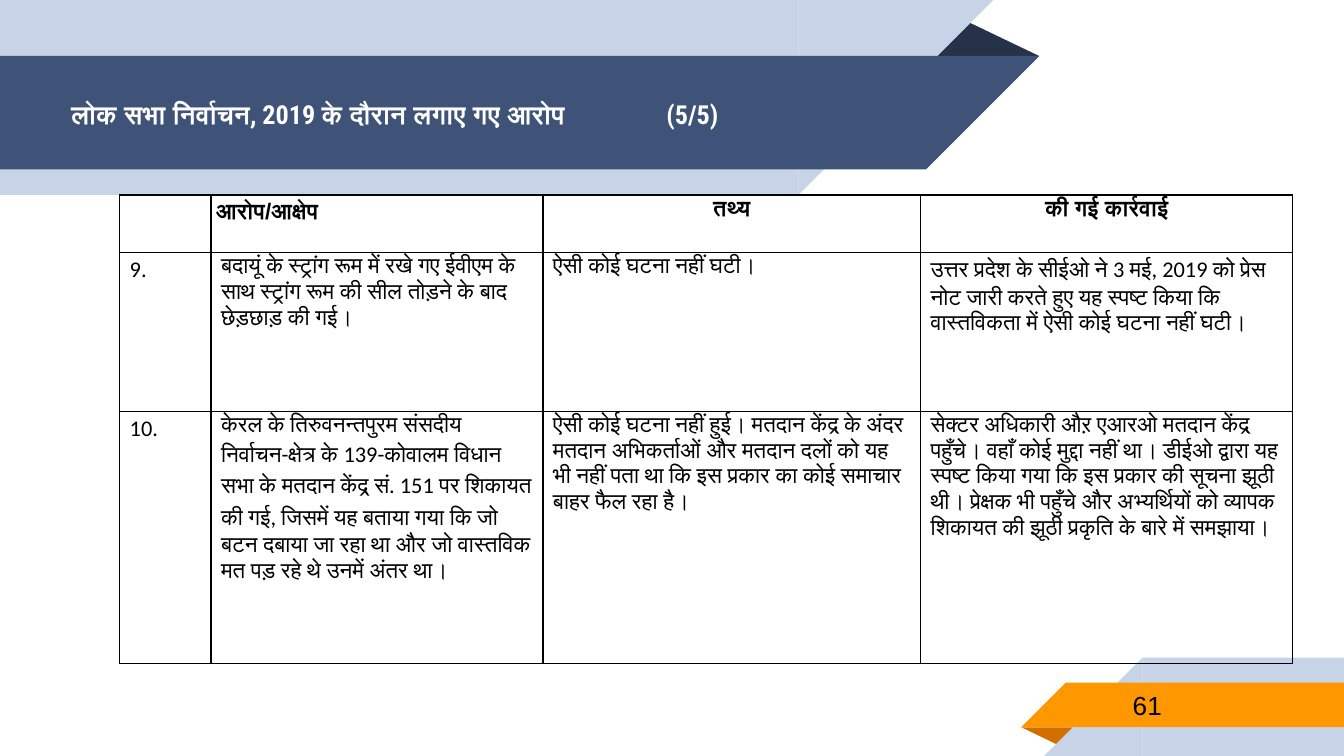
from lxml.etree import SubElement
from pptx import Presentation
from pptx.dml.color import RGBColor
from pptx.enum.shapes import MSO_SHAPE
from pptx.enum.text import MSO_ANCHOR, PP_ALIGN
from pptx.oxml.ns import qn
from pptx.util import Inches, Pt

SLIDE_W = Inches(10)
SLIDE_H = SLIDE_W * 9 // 16
PALE, NAVY, DARK_NAVY = "C7D3E6", "3F5378", "263248"
ORANGE, DARK_ORANGE = "FF9800", "D26F00"
BLACK, WHITE = "000000", "FFFFFF"

COLUMN_SHARES = [6.8, 24.7, 28.1, 27.7]
ROW_SHARES = [7.6, 21, 33.4]
ROWS = [
    ["", "आरोप/आक्षेप", "तथ्य", "की गई कार्रवाई"],
    [
        "9.",
        "बदायूं के स्ट्रांग रूम में रखे गए ईवीएम के साथ स्ट्रांग रूम की सील तोड़ने के बाद छेड़छाड़ की गई।",
        "ऐसी कोई घटना नहीं घटी।",
        "उत्तर प्रदेश के सीईओ ने 3 मई, 2019 को प्रेस नोट जारी करते हुए यह स्पष्ट किया कि वास्तविकता में ऐसी कोई घटना नहीं घटी।",
    ],
    [
        "10.",
        "केरल के तिरुवनन्तपुरम संसदीय निर्वाचन-क्षेत्र के 139-कोवालम विधान सभा के मतदान केंद्र सं. 151 पर शिकायत की गई, जिसमें यह बताया गया कि जो बटन दबाया जा रहा था और जो वास्तविक मत पड़ रहे थे उनमें अंतर था।",
        "ऐसी कोई घटना नहीं हुई। मतदान केंद्र के अंदर मतदान अभिकर्ताओं और मतदान दलों को यह भी नहीं पता था कि इस प्रकार का कोई समाचार बाहर फैल रहा है।",
        "सेक्टर अधिकारी औऱ एआरओ मतदान केंद्र पहुँचे। वहाँ कोई मुद्दा नहीं था। डीईओ द्वारा यह स्पष्ट किया गया कि इस प्रकार की सूचना झूठी थी। प्रेक्षक भी पहुँचे और अभ्यर्थियों को व्यापक शिकायत की झूठी प्रकृति के बारे में समझाया।",
    ],
]


def across(share):
    return int(SLIDE_W * share / 100)


def down(share):
    return int(SLIDE_H * share / 100)


def color(hex_string):
    return RGBColor.from_string(hex_string)


def add_block(s, kind, left, top, width, height, fill, rotation=0):
    sp = s.shapes.add_shape(kind, left, top, width, height)
    sp.shadow.inherit = False
    sp.fill.solid()
    sp.fill.fore_color.rgb = color(fill)
    sp.line.fill.background()
    sp.rotation = rotation
    return sp


def add_fold(s, x, y, w, h, fill, rotation=0):
    sp = add_block(s, MSO_SHAPE.ISOSCELES_TRIANGLE, across(x), down(y), across(w), down(h), fill, rotation)
    sp.adjustments[0] = 0.324


def add_band(s, x, y, w, h, fill, slant_left=False):
    left, top, width, side = across(x), down(y), across(w), down(h)
    add_block(s, MSO_SHAPE.RECTANGLE, left, top, width, side, fill)
    tip, rotation = (left - side, 270) if slant_left else (left + width, 90)
    add_block(s, MSO_SHAPE.RIGHT_TRIANGLE, tip, top, side, side, fill, rotation)


def style(p, size, font, fill, bold=False):
    for r in p.runs:
        r.font.size = Pt(size)
        r.font.name = font
        r.font.bold = bold
        r.font.color.rgb = color(fill)


def add_text(s, x, y, w, h, text, font, fill, bold=False, tab=None):
    tf = s.shapes.add_textbox(across(x), down(y), across(w), down(h)).text_frame
    tf.word_wrap = True
    tf.vertical_anchor = MSO_ANCHOR.MIDDLE
    tf.margin_left = tf.margin_right = tf.margin_top = tf.margin_bottom = Inches(0.1)
    tf.text = text
    p = tf.paragraphs[0]
    if tab:
        tabs = SubElement(p._p.get_or_add_pPr(), qn("a:tabLst"))
        SubElement(tabs, qn("a:tab"), pos=str(across(tab)), algn="l")
    style(p, 14, font, fill, bold)


def add_borders(cell):
    tcPr = cell._tc.get_or_add_tcPr()
    for i, side in enumerate(("lnL", "lnR", "lnT", "lnB")):
        ln = tcPr.makeelement(qn(f"a:{side}"), {"w": str(Pt(0.75))})
        SubElement(SubElement(ln, qn("a:solidFill")), qn("a:srgbClr"), val=BLACK)
        tcPr.insert(i, ln)


def fill_cell(cell, text, header, centred):
    cell.fill.background()
    add_borders(cell)
    cell.margin_left = cell.margin_right = Pt(2.7 if header else 5.4)
    cell.margin_top = cell.margin_bottom = 0
    cell.text_frame.text = text
    p = cell.text_frame.paragraphs[0]
    p.line_spacing = 1.15
    if centred:
        p.alignment = PP_ALIGN.CENTER
    style(p, 12, "Arial" if header else "Calibri", BLACK, header)


def add_allegations(s, x, y):
    table = s.shapes.add_table(
        len(ROWS), len(COLUMN_SHARES), across(x), down(y),
        across(sum(COLUMN_SHARES)), down(sum(ROW_SHARES)),
    ).table
    for column, share in zip(table.columns, COLUMN_SHARES):
        column.width = across(share)
    for i, (row, share, texts) in enumerate(zip(table.rows, ROW_SHARES, ROWS)):
        row.height = down(share)
        for j, (cell, text) in enumerate(zip(row.cells, texts)):
            fill_cell(cell, text, i == 0, i == 0 and j > 1)


def main():
    prs = Presentation()
    prs.slide_width, prs.slide_height = SLIDE_W, SLIDE_H
    s = prs.slides.add_slide(prs.slide_layouts[6])

    add_fold(s, 68.8, 2.5, 8.5, 4.9, DARK_NAVY)
    add_band(s, 0, 0, 59.4, 25.8, PALE)
    add_band(s, 0, 7.4, 68.9, 15, NAVY)

    add_fold(s, 76, 96.2, 4.3, 2.5, DARK_ORANGE, 180)
    add_band(s, 85, 87, 15, 13, PALE, slant_left=True)
    add_band(s, 79.3, 90.3, 20.7, 5.9, ORANGE, slant_left=True)

    add_text(s, 4.3, 7.6, 62.1, 15, "लोक सभा निर्वाचन, 2019 के दौरान लगाए गए आरोप\t(5/5)",
             "Roboto Condensed", WHITE, bold=True, tab=44.3)
    add_text(s, 83.3, 90.2, 16.3, 6.2, "61", "Arial", BLACK)
    add_allegations(s, 8.9, 25.8)

    prs.save("out.pptx")


if __name__ == "__main__":
    main()
